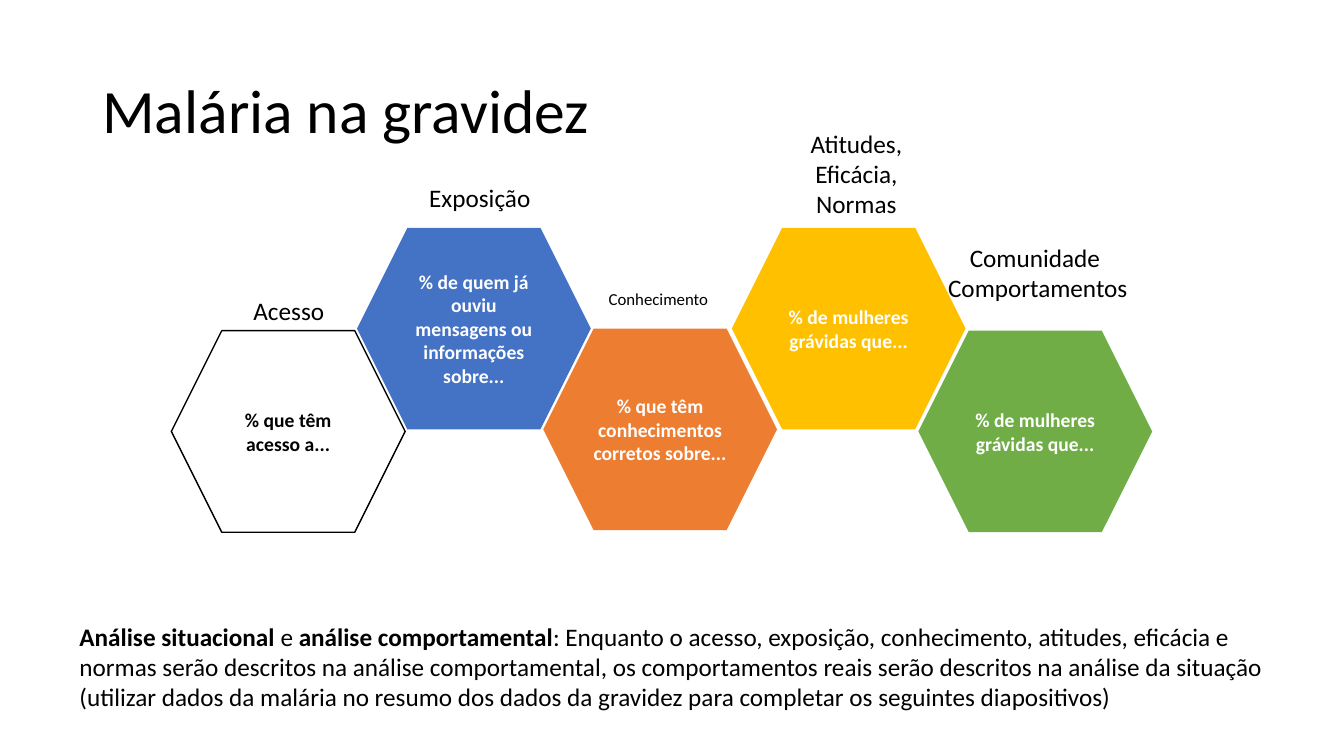
from pptx import Presentation
from pptx.dml.color import RGBColor
from pptx.enum.shapes import MSO_SHAPE as Shape
from pptx.enum.text import MSO_ANCHOR as Anchor, PP_ALIGN as Align
from pptx.util import Pt

BLACK = RGBColor(0x00, 0x00, 0x00)
WHITE = RGBColor(0xFF, 0xFF, 0xFF)
BLUE = RGBColor(0x44, 0x72, 0xC4)
ORANGE = RGBColor(0xED, 0x7D, 0x31)
YELLOW = RGBColor(0xFF, 0xC0, 0x00)
GREEN = RGBColor(0x70, 0xAD, 0x47)


def format_text(frame, size, color=BLACK, bold=False, align=Align.LEFT):
    frame.word_wrap = True
    for paragraph in frame.paragraphs:
        paragraph.alignment = align
        for run in paragraph.runs:
            run.font.name = "Calibri"
            run.font.size = Pt(size)
            run.font.color.rgb = color
            run.font.bold = bold


def add_text(left, top, width, height, text, size, align=Align.LEFT):
    box = slide.shapes.add_textbox(Pt(left), Pt(top), Pt(width), Pt(height))
    box.text_frame.text = text
    format_text(box.text_frame, size, align=align)
    return box.text_frame


prs = Presentation()
prs.slide_width, prs.slide_height = Pt(960), Pt(540)
slide = prs.slides.add_slide(prs.slide_layouts[6])

# Title
title = add_text(66, 28.8, 828, 104.4, "Malária na gravidez", 44)
title.vertical_anchor = Anchor.MIDDLE
title.paragraphs[0].line_spacing = 0.9

# Chain of hexagons: left, top, fill, text
stages = [
    (388, 234.7, ORANGE, "% que têm conhecimentos corretos sobre..."),
    (255, 162.7, BLUE, "% de quem já ouviu mensagens ou informações sobre..."),
    (522.7, 162.7, YELLOW, "% de mulheres grávidas que..."),
    (656, 236.2, GREEN, "% de mulheres grávidas que..."),
    (122.4, 236.2, None, "% que têm acesso a..."),
]
for left, top, fill, text in stages:
    hexagon = slide.shapes.add_shape(Shape.HEXAGON, Pt(left), Pt(top), Pt(167), Pt(144))
    hexagon.adjustments[0] = 0.25
    hexagon.shadow.inherit = False
    if fill is None:
        hexagon.fill.background()
        hexagon.line.color.rgb = BLACK
        hexagon.line.width = Pt(1)
    else:
        hexagon.fill.solid()
        hexagon.fill.fore_color.rgb = fill
        hexagon.line.fill.background()
    hexagon.text_frame.text = text
    hexagon.text_frame.vertical_anchor = Anchor.MIDDLE
    format_text(hexagon.text_frame, 14, WHITE if fill else BLACK, True, Align.CENTER)

# Labels above the hexagons: left, top, width, height, text, size, alignment
labels = [
    (154.8, 207.4, 103, 29, "Acesso", 18, Align.CENTER),
    (299.5, 126.7, 103, 29, "Exposição", 18, Align.LEFT),
    (427.7, 203, 103, 29, "Conhecimento", 12, Align.LEFT),
    (560.2, 87.8, 103, 72.7, "Atitudes, Eficácia, Normas", 18, Align.CENTER),
    (648, 169.2, 186.5, 51, "Comunidade \nComportamentos", 18, Align.CENTER),
]
for label in labels:
    add_text(*label)

# Closing explanation with bold key terms
explanation = add_text(49.7, 440, 875.5, 72.7, "", 18)
phrases = [
    ("Análise situacional", True),
    (" e ", False),
    ("análise comportamental", True),
    (": Enquanto o acesso, exposição, conhecimento, atitudes, eficácia e normas "
     "serão descritos na análise comportamental, os comportamentos reais serão "
     "descritos na análise da situação (utilizar dados da malária no resumo dos "
     "dados da gravidez para completar os seguintes diapositivos)", False),
]
for phrase, _ in phrases:
    explanation.paragraphs[0].add_run().text = phrase
format_text(explanation, 18)
for run, (_, bold) in zip(explanation.paragraphs[0].runs, phrases):
    run.font.bold = bold

prs.save("out.pptx")
